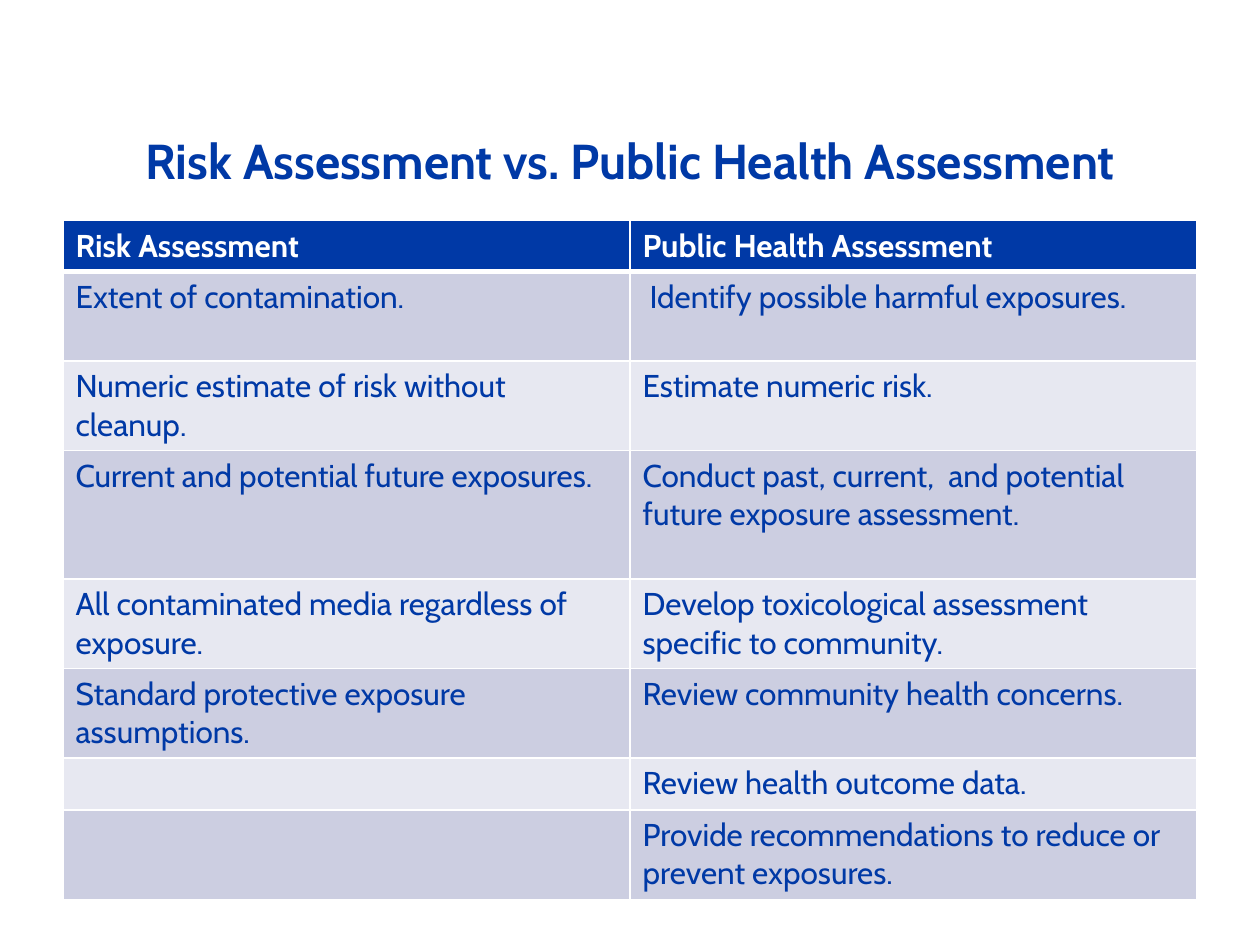
from dataclasses import dataclass

from lxml import etree
from pptx import Presentation
from pptx import util as u
from pptx.dml.color import RGBColor
from pptx.enum import text
from pptx.oxml.ns import qn

WIDTH, HEIGHT = u.Inches(10), u.Inches(7.5)
MARGIN = 0.05
FONT = "Cabin"
COLOURS = {
    "blue": "0039A6",
    "white": "FFFFFF",
    "dark_band": "CCCEE1",
    "light_band": "E7E8F1",
}


@dataclass(frozen=True)
class Row:
    risk: str
    health: str
    height: float = 0.71


ROWS = [
    Row("Risk Assessment", "Public Health Assessment", 0.4),
    Row("Extent of contamination.", " Identify possible harmful exposures."),
    Row("Numeric estimate of risk without cleanup.", "Estimate numeric risk."),
    Row(
        "Current and potential future exposures.",
        "Conduct past, current,  and potential future exposure assessment.",
        1.02,
    ),
    Row(
        "All contaminated media regardless of exposure.",
        "Develop toxicological assessment specific to community.",
    ),
    Row("Standard protective exposure assumptions.", "Review community health concerns."),
    Row("", "Review health outcome data.", 0.41),
    Row("", "Provide recommendations to reduce or prevent exposures."),
]


def write(frame, wording: str, *, size: float, colour: str, bold: bool = False,
          align=text.PP_ALIGN.LEFT, spacing=None) -> None:
    para = frame.paragraphs[0]
    para.alignment = align
    if spacing:
        para.line_spacing = u.Pt(spacing)
    if not wording:
        para.font.size = u.Pt(size)
        return
    span = para.add_run()
    span.text = wording
    span.font.name = FONT
    span.font.size = u.Pt(size)
    span.font.bold = bold
    span.font.color.rgb = RGBColor.from_string(COLOURS[colour])


def draw_border(cell, side: str, points: float) -> None:
    properties = cell._tc.get_or_add_tcPr()
    line = etree.SubElement(properties, qn(f"a:ln{side}"), w=str(u.Pt(points)))
    fill = etree.SubElement(line, qn("a:solidFill"))
    etree.SubElement(fill, qn("a:srgbClr"), val=COLOURS["white"])


def draw_cell(cell, wording: str, row: int) -> None:
    header = row == 0
    band = "blue" if header else "dark_band" if row % 2 else "light_band"
    thickness = {"L": 1, "R": 1, "T": 3 if row == 1 else 1, "B": 3 if header else 1}
    for side, points in thickness.items():
        draw_border(cell, side, points)
    cell.fill.solid()
    cell.fill.fore_color.rgb = RGBColor.from_string(COLOURS[band])
    write(cell.text_frame, wording, size=18, bold=header,
          colour="white" if header else "blue")


def draw_title(slide) -> None:
    title = slide.shapes.title
    title.left, title.top = int(WIDTH * MARGIN), int(HEIGHT * 0.04)
    title.width, title.height = int(WIDTH * (1 - 2 * MARGIN)), u.Inches(1.25)
    frame = title.text_frame
    frame.auto_size = text.MSO_AUTO_SIZE.NONE
    frame.vertical_anchor = text.MSO_ANCHOR.BOTTOM
    write(frame, "Risk Assessment vs. Public Health Assessment", size=28,
          colour="blue", bold=True, align=text.PP_ALIGN.CENTER, spacing=30)


def draw_table(slide, rows: list[Row]) -> None:
    total = u.Inches(sum(row.height for row in rows))
    table = slide.shapes.add_table(
        len(rows), 2, int(WIDTH * MARGIN), u.Inches(1.75),
        int(WIDTH * (1 - 2 * MARGIN)), total,
    ).table
    for index, row in enumerate(rows):
        table.rows[index].height = u.Inches(row.height)
        for column, wording in enumerate((row.risk, row.health)):
            draw_cell(table.cell(index, column), wording, index)


def main() -> None:
    deck = Presentation()
    deck.slide_width, deck.slide_height = WIDTH, HEIGHT
    page = deck.slides.add_slide(deck.slide_layouts.get_by_name("Title Only"))
    draw_title(page)
    draw_table(page, ROWS)
    deck.save("out.pptx")


if __name__ == "__main__":
    main()
